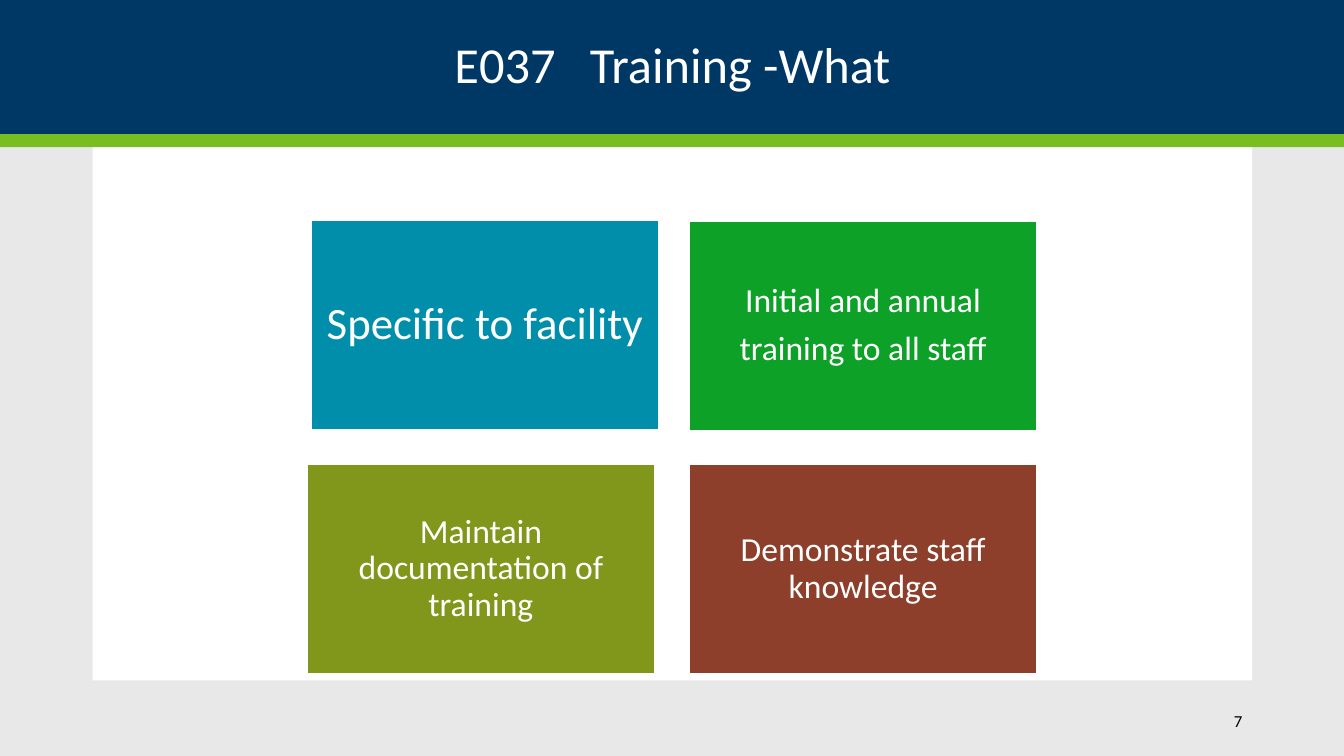
from pptx import Presentation
from pptx.dml.color import RGBColor
from pptx.enum.shapes import MSO_SHAPE
from pptx.enum.text import MSO_ANCHOR, MSO_AUTO_SIZE, PP_ALIGN
from pptx.util import Inches, Pt

TITLE = ["E037", " ", "Training -What"]
TITLE_GAP = 16.3
PAGE = "7"
BACKGROUND = "E8E8E8"
BANDS = [
    (0, 0, 13.33, 1.33, "003865"),
    (0.92, 1.46, 11.5, 5.29, "FFFFFF"),
    (0, 1.33, 13.33, 0.13, "78BE21"),
]
CARDS = [
    (["Specific to facility"], "008EAA", 32, 0.13, (0.04, -0.01)),
    (["Initial and annual", "training to all staff"], "0EA128", 24, 0.1, (0, 0)),
    (["Maintain documentation of training"], "80971C", 24, 0.1, (0, 0)),
    (["Demonstrate staff knowledge"], "8D3F2B", 24, 0.1, (0, 0)),
]
COLS = 2
GRID_X, GRID_Y = 3.05, 2.2
CARD_W, CARD_H = 3.44, 2.07
STEP_X, STEP_Y = 3.79, 2.41


def rgb(value):
    return RGBColor.from_string(value)


def add_rect(s, x, y, w, h, fill, line=None):
    sp = s.shapes.add_shape(MSO_SHAPE.RECTANGLE, Inches(x), Inches(y), Inches(w), Inches(h))
    sp.shadow.inherit = False
    sp.fill.solid()
    sp.fill.fore_color.rgb = rgb(fill)
    if line:
        sp.line.color.rgb = rgb(line)
        sp.line.width = Pt(0.85)
    else:
        sp.line.fill.background()
    return sp


def write(sp, paragraphs, size, color="FFFFFF", align=PP_ALIGN.CENTER,
          inset=(0.1, 0.05), spacing=0.9, after=0):
    tf = sp.text_frame
    tf.word_wrap = True
    tf.auto_size = MSO_AUTO_SIZE.NONE
    tf.vertical_anchor = MSO_ANCHOR.MIDDLE
    tf.margin_left = tf.margin_right = Inches(inset[0])
    tf.margin_top = tf.margin_bottom = Inches(inset[1])
    for i, runs in enumerate(paragraphs):
        p = tf.add_paragraph() if i else tf.paragraphs[0]
        p.alignment = align
        p.line_spacing = spacing
        p.space_before = Pt(0)
        p.space_after = Pt(after)
        for text in runs:
            r = p.add_run()
            r.text = text
            r.font.name = "Calibri"
            r.font.size = Pt(size)
            r.font.color.rgb = rgb(color)
    return tf


prs = Presentation()
prs.slide_width, prs.slide_height = Inches(13.33), Inches(7.5)
s = prs.slides.add_slide(prs.slide_layouts[5])
s.background.fill.solid()
s.background.fill.fore_color.rgb = rgb(BACKGROUND)

for band in BANDS:
    add_rect(s, *band)

title = s.shapes.title
title.left, title.top = Inches(0.92), Inches(0)
title.width, title.height = Inches(11.5), Inches(1.33)
tf = write(title, [TITLE], 36, inset=(0, 0.05))
gap = tf.paragraphs[0].runs[1]
gap.font._element.set("spc", str(round(TITLE_GAP * 100)))
s.shapes._spTree.append(title._element)

page = s.shapes.add_textbox(Inches(10.82), Inches(6.95), Inches(1.6), Inches(0.4))
write(page, [[PAGE]], 12, color="000000", align=PP_ALIGN.RIGHT, spacing=1)

for i, (lines, fill, size, inset, (dx, dy)) in enumerate(CARDS):
    row, col = divmod(i, COLS)
    card = add_rect(s, GRID_X + col * STEP_X + dx, GRID_Y + row * STEP_Y + dy,
                    CARD_W, CARD_H, fill, line="FFFFFF")
    write(card, [[line] for line in lines], size, inset=(inset, inset), after=size * 0.35)

prs.save("out.pptx")
